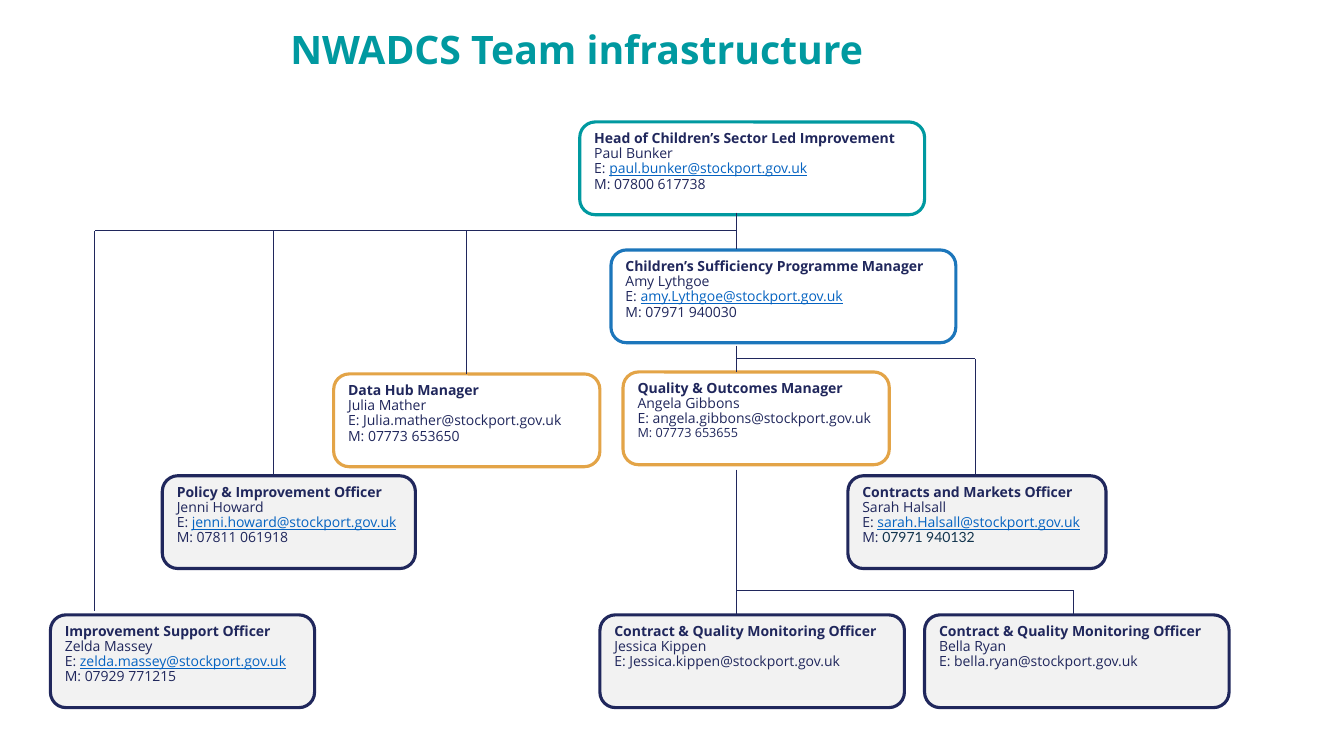
from pptx import Presentation
from pptx import util as u
from pptx.dml.color import RGBColor
from pptx.enum import shapes, text
from pptx.oxml.ns import qn
from lxml import etree

TEAL = RGBColor(0x00, 0x99, 0xA0)
BLUE = RGBColor(0x1C, 0x76, 0xBB)
AMBER = RGBColor(0xE3, 0xA4, 0x47)
NAVY = RGBColor(0x20, 0x27, 0x5C)
SLATE = RGBColor(0x12, 0x34, 0x4D)
LINK = RGBColor(0x05, 0x63, 0xC1)
WHITE = RGBColor(0xFF, 0xFF, 0xFF)
GREY = RGBColor(0xF2, 0xF2, 0xF2)

CARD_HEIGHT = 0.92
OFFICER_ROW = 6.1


def add_text(paragraph, words, font="Open Sans", size=10, color=NAVY, bold=False, underline=False):
    run = paragraph.add_run()
    run.text = words
    run.font.name = font
    run.font.size = u.Pt(size)
    run.font.color.rgb = color
    run.font.bold = bold
    run.font.underline = underline


class OrgChart:
    def __init__(self, presentation):
        self.slide = presentation.slides.add_slide(presentation.slide_layouts[5])

    def title(self, words, left, top, width, height):
        shape = self.slide.shapes.title
        shape.left, shape.top = u.Inches(left), u.Inches(top)
        shape.width, shape.height = u.Inches(width), u.Inches(height)
        frame = shape.text_frame
        frame.auto_size = text.MSO_AUTO_SIZE.NONE
        frame.vertical_anchor = text.MSO_ANCHOR.MIDDLE
        paragraph = frame.paragraphs[0]
        paragraph.alignment = text.PP_ALIGN.LEFT
        add_text(paragraph, words, size=28, color=TEAL, bold=True)

    def card(self, left, top, width, role, name, email, phone=None,
             outline=NAVY, fill=GREY, linked=False, phone_format=None, label_size=10):
        """Draw one team member's box; phone_format overrides the number's font."""
        shape = self.slide.shapes.add_shape(
            shapes.MSO_SHAPE.ROUNDED_RECTANGLE, u.Inches(left), u.Inches(top),
            u.Inches(width), u.Inches(CARD_HEIGHT))
        shape.shadow.inherit = False
        shape.fill.solid()
        shape.fill.fore_color.rgb = fill
        shape.line.color.rgb = outline
        shape.line.width = u.Pt(2.25)

        frame = shape.text_frame
        frame.word_wrap = True
        frame.vertical_anchor = text.MSO_ANCHOR.TOP
        email_format = {"color": LINK, "underline": True} if linked else {}
        rows = [[(role, {"bold": True})], [(name, {})], [("E: ", {}), (email, email_format)]]
        if phone:
            number_format = phone_format or {"size": label_size}
            rows.append([("M: ", {"size": label_size}), (phone, number_format)])
        for index, row in enumerate(rows):
            paragraph = frame.add_paragraph() if index else frame.paragraphs[0]
            paragraph.alignment = text.PP_ALIGN.LEFT
            paragraph.line_spacing = 0.9
            for words, formatting in row:
                add_text(paragraph, words, **formatting)

    def line(self, x1, y1, x2, y2):
        connector = self.slide.shapes.add_connector(
            shapes.MSO_CONNECTOR.STRAIGHT, u.Inches(x1), u.Inches(y1), u.Inches(x2), u.Inches(y2))
        connector.line.color.rgb = NAVY
        connector.line.width = u.Pt(0.5)
        etree.SubElement(connector._element.spPr, qn("a:effectLst"))


def main():
    presentation = Presentation()
    presentation.slide_width = u.Inches(13.33)
    presentation.slide_height = u.Inches(7.5)
    chart = OrgChart(presentation)
    chart.title("NWADCS Team infrastructure", 2.78, 0.2, 8.22, 0.57)

    chart.card(5.75, 1.21, 3.42, "Head of Children’s Sector Led Improvement", "Paul Bunker",
               "paul.bunker@stockport.gov.uk", "07800 617738",
               outline=TEAL, fill=WHITE, linked=True)
    chart.card(6.06, 2.48, 3.42, "Children’s Sufficiency Programme Manager", "Amy Lythgoe",
               "amy.Lythgoe@stockport.gov.uk", "07971 940030",
               outline=BLUE, fill=WHITE, linked=True)
    chart.card(3.31, 3.71, 2.64, "Data Hub Manager", "Julia Mather",
               "Julia.mather@stockport.gov.uk", "07773 653650", outline=AMBER, fill=WHITE)
    chart.card(6.18, 3.69, 2.64, "Quality & Outcomes Manager", "Angela Gibbons",
               "angela.gibbons@stockport.gov.uk", "07773 653655",
               outline=AMBER, fill=WHITE, label_size=9)
    chart.card(1.61, 4.72, 2.51, "Policy & Improvement Officer", "Jenni Howard",
               "jenni.howard@stockport.gov.uk", "07811 061918", linked=True)
    chart.card(8.41, 4.72, 2.56, "Contracts and Markets Officer", "Sarah Halsall",
               "sarah.Halsall@stockport.gov.uk", "07971 940132", linked=True,
               phone_format={"font": "Lato", "color": SLATE})
    chart.card(0.5, OFFICER_ROW, 2.62, "Improvement Support Officer", "Zelda Massey",
               "zelda.massey@stockport.gov.uk", "07929 771215", linked=True)
    for left, name, email in [(5.95, "Jessica Kippen", "Jessica.kippen@stockport.gov.uk"),
                              (9.17, "Bella Ryan", "bella.ryan@stockport.gov.uk")]:
        chart.card(left, OFFICER_ROW, 3.02, "Contract & Quality Monitoring Officer", name, email)

    trunk, head_branch, manager_branch, quality_branch = 7.3, 2.29, 3.56, 5.86
    for top, bottom in [(2.11, 2.47), (3.43, 3.69), (4.66, OFFICER_ROW)]:
        chart.line(trunk, top, trunk, bottom)
    for branch, end in [(head_branch, 0.94), (manager_branch, 9.67), (quality_branch, 10.65)]:
        chart.line(trunk, branch, end, branch)
    for x, branch, bottom in [(0.94, head_branch, 6.06), (2.71, head_branch, 4.72),
                              (4.63, head_branch, 3.71), (9.67, manager_branch, 4.72),
                              (10.65, quality_branch, OFFICER_ROW)]:
        chart.line(x, branch, x, bottom)

    presentation.save("out.pptx")


if __name__ == "__main__":
    main()
